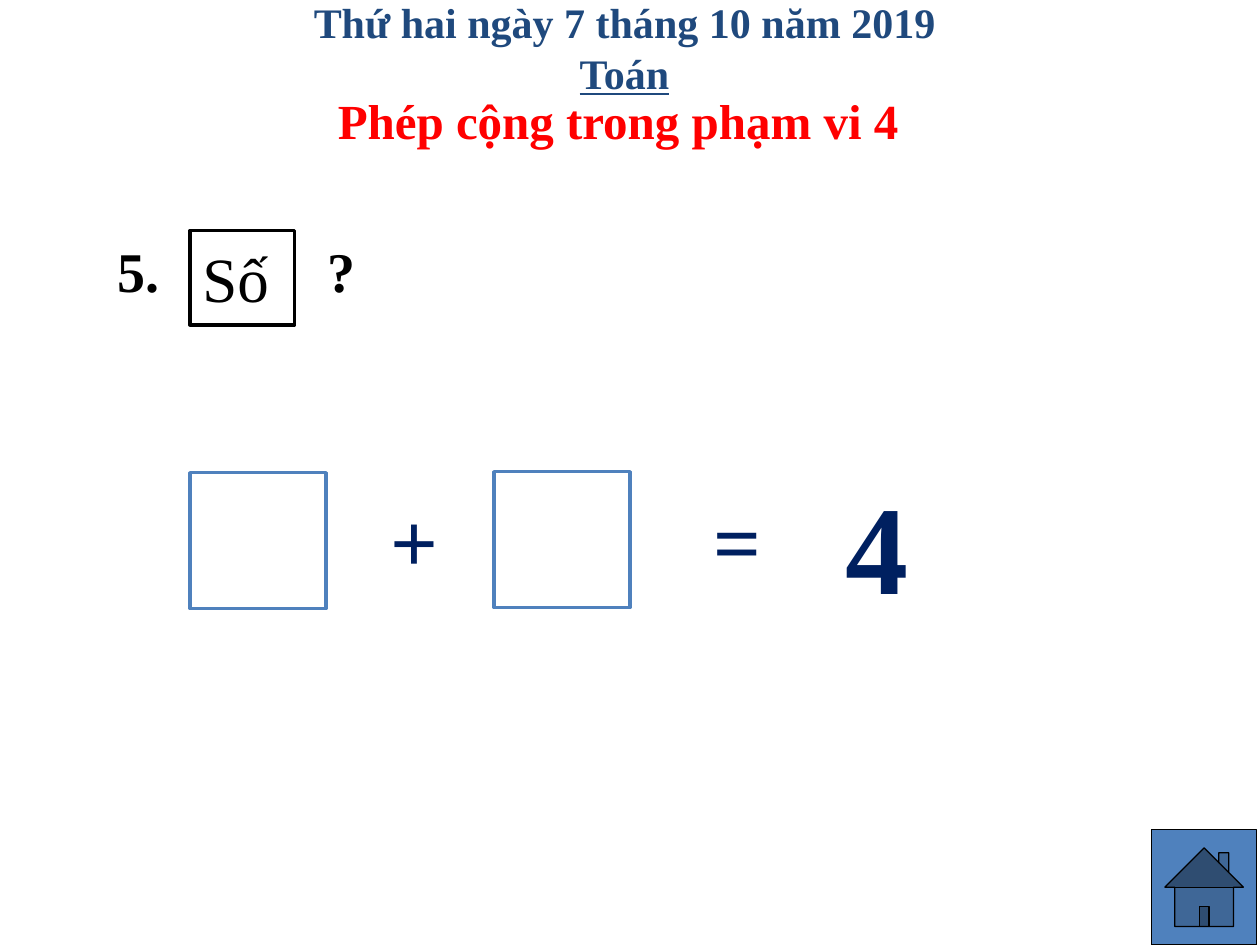
from dataclasses import dataclass
from typing import Optional

from lxml import etree
from pptx import Presentation
from pptx import util as u
from pptx.dml.color import RGBColor
from pptx.enum import shapes, text
from pptx.oxml import ns

FONT = "Times New Roman"
BLACK = RGBColor(0x00, 0x00, 0x00)
WHITE = RGBColor(0xFF, 0xFF, 0xFF)
BLUE = RGBColor(0x4F, 0x81, 0xBD)
DARK = RGBColor(0x1F, 0x49, 0x7D)
NAVY = RGBColor(0x00, 0x20, 0x60)
RED = RGBColor(0xFF, 0x00, 0x00)


@dataclass
class Area:
    left: float
    top: float
    width: float
    height: float

    def dims(self) -> tuple:
        return tuple(u.Cm(v) for v in (self.left, self.top, self.width, self.height))


@dataclass
class Label:
    area: Area
    words: str
    size: int
    color: RGBColor
    before: float = 0


@dataclass
class Box:
    area: Area
    fill: RGBColor
    line: RGBColor
    width: float = 2
    kind: shapes.MSO_SHAPE = shapes.MSO_SHAPE.RECTANGLE
    words: Optional[str] = None


SIDE = 2.74
LABELS = [
    Label(Area(6.35, 4.65, 6.99, 2.11), "?", 32, BLACK, 6.4),
    Label(Area(7.62, 9.73, 2.79, 2.31), "+", 48, NAVY),
    Label(Area(14.13, 9.73, 2.79, 2.31), "=", 48, NAVY),
    Label(Area(16.79, 9.32, 3.53, 3.33), "4", 72, NAVY),
    Label(Area(6.56, 1.7, 16.08, 1.47), "Phép cộng trong phạm vi 4", 28, RED, 5.6),
]
BOXES = [
    Box(Area(3.83, 4.65, 2.11, 1.9), WHITE, BLACK, words="Số"),
    Box(Area(3.83, 9.53, SIDE, SIDE), WHITE, BLUE),
    Box(Area(9.96, 9.51, SIDE, SIDE), WHITE, BLUE),
    Box(Area(23.22, 16.72, 2.11, 2.33), BLUE, BLACK, 0.75,
        shapes.MSO_SHAPE.ACTION_BUTTON_HOME),
]


def style(para, size: int, color: RGBColor, bold: bool = True) -> None:
    for run in para.runs:
        font = run.font
        font.name, font.size, font.bold = FONT, u.Pt(size), bold
        font.color.rgb = color


def place(shape, area: Area) -> None:
    shape.left, shape.top, shape.width, shape.height = area.dims()
    shape.text_frame.auto_size = text.MSO_AUTO_SIZE.NONE


def draw_label(slide, item: Label) -> None:
    frame = slide.shapes.add_textbox(*item.area.dims()).text_frame
    frame.word_wrap = True
    frame.text = item.words
    para = frame.paragraphs[0]
    para.space_before = u.Pt(item.before)
    style(para, item.size, item.color)


def draw_box(slide, item: Box) -> None:
    shape = slide.shapes.add_shape(item.kind, *item.area.dims())
    shape.shadow.inherit = False
    shape.fill.solid()
    shape.fill.fore_color.rgb = item.fill
    shape.line.color.rgb = item.line
    shape.line.width = u.Pt(item.width)
    if item.words:
        shape.text_frame.text = item.words
        para = shape.text_frame.paragraphs[0]
        para.alignment = text.PP_ALIGN.LEFT
        style(para, 36, BLACK, False)


def draw_title(slide) -> None:
    title = slide.shapes.title
    place(title, Area(-1.48, -0.64, 28.14, 3.18))
    frame = title.text_frame
    frame.text = "Thứ hai ngày 7 tháng 10 năm 2019\vToán"
    frame.vertical_anchor = text.MSO_ANCHOR.MIDDLE
    para = frame.paragraphs[0]
    para.alignment = text.PP_ALIGN.CENTER
    style(para, 24, DARK)
    para.runs[1].font.underline = True


def draw_task(slide) -> None:
    body = slide.placeholders[1]
    place(body, Area(2.11, 4.65, 1.7, 2.11))
    body.text_frame.text = "5."
    para = body.text_frame.paragraphs[0]
    style(para, 32, BLACK)
    props = para._p.get_or_add_pPr()
    props.set("marL", "0")
    props.set("indent", "0")
    etree.SubElement(props, ns.qn("a:buNone"))


def main() -> None:
    deck = Presentation()
    deck.slide_width, deck.slide_height = u.Cm(25.4), u.Cm(19.05)
    slide = deck.slides.add_slide(deck.slide_layouts[1])
    draw_title(slide)
    draw_task(slide)
    for box in BOXES:
        draw_box(slide, box)
    for label in LABELS:
        draw_label(slide, label)
    deck.save("out.pptx")


if __name__ == "__main__":
    main()
